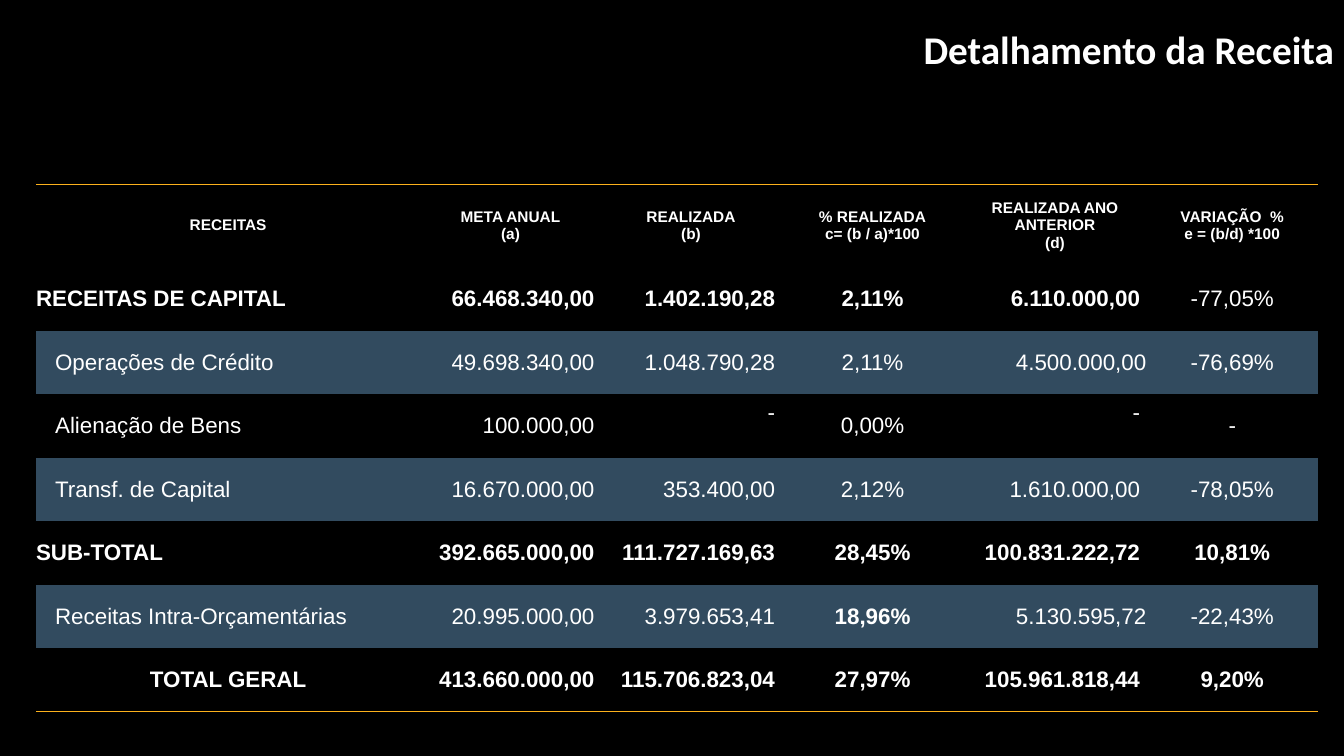
import pptx
import pptx.util
import pptx.dml.color
import pptx.enum.text
import pptx.oxml
import pptx.oxml.ns

Cm, Pt = pptx.util.Cm, pptx.util.Pt
RGBColor = pptx.dml.color.RGBColor
ALIGN = pptx.enum.text.PP_ALIGN
ANCHOR = pptx.enum.text.MSO_ANCHOR

# Content
TITLE = "Detalhamento da Receita"
HEADER = ["RECEITAS", "META ANUAL\n(a)", "REALIZADA\n(b)", "% REALIZADA\nc= (b / a)*100",
          "REALIZADA ANO ANTERIOR\n(d)", "VARIAÇÃO  %\ne = (b/d) *100"]
REVENUES = [
    ["RECEITAS DE CAPITAL", "66.468.340,00", "1.402.190,28", "2,11%", "6.110.000,00", "-77,05%"],
    ["Operações de Crédito", "49.698.340,00", "1.048.790,28", "2,11%", "4.500.000,00", "-76,69%"],
    ["Alienação de Bens", "100.000,00", "-", "0,00%", "-", "-"],
    ["Transf. de Capital", "16.670.000,00", "353.400,00", "2,12%", "1.610.000,00", "-78,05%"],
    ["SUB-TOTAL", "392.665.000,00", "111.727.169,63", "28,45%", "100.831.222,72", "10,81%"],
    ["Receitas Intra-Orçamentárias", "20.995.000,00", "3.979.653,41", "18,96%", "5.130.595,72",
     "-22,43%"],
    ["TOTAL GERAL", "413.660.000,00", "115.706.823,04", "27,97%", "105.961.818,44", "9,20%"],
]
ROWS = [HEADER] + REVENUES
LAST = len(ROWS) - 1

# Format
BLACK = RGBColor(0x00, 0x00, 0x00)
WHITE = RGBColor(0xFF, 0xFF, 0xFF)
BAND = RGBColor(0x32, 0x4B, 0x5F)
GOLD = RGBColor(0xFC, 0xB1, 0x1C)
NO_STYLE = "{2D5ABB26-0587-4C30-8999-92F81FD0307C}"
COL_WIDTHS = [9.68, 4.55, 4.55, 4.6, 4.6, 4.33]
HEADER_HEIGHT, ROW_HEIGHT = 2.09, 1.6
BOLD_ROWS = {0, 1, 5, LAST}
BOLD_EXCEPTIONS = {(1, 5), (6, 3)}
INDENTED_ROWS = {2, 3, 4, 6}
AMOUNT_COLS = {1, 2, 4}
FLUSH_AMOUNTS = {(2, 4), (6, 4)}


def set_format(obj, values):
    for name, value in values.items():
        setattr(obj, name, value)


def style_font(font, name, size, bold):
    set_format(font, {"name": name, "size": Pt(size), "bold": bold})
    font.color.rgb = WHITE


def add_border(cell, side):
    cell._tc.get_or_add_tcPr().insert(0, pptx.oxml.parse_xml(
        f'<a:{side} {pptx.oxml.ns.nsdecls("a")} w="12700"><a:solidFill>'
        f'<a:srgbClr val="{GOLD}"/></a:solidFill></a:{side}>'))


def cell_align(row, col):
    if row == 0 or col in (3, 5) or (row == LAST and col == 0):
        return ALIGN.CENTER
    return ALIGN.LEFT if col == 0 else ALIGN.RIGHT


def fill_cell(cell, row, col, text):
    amount = row > 0 and col in AMOUNT_COLS
    raised = amount and text == "-"
    set_format(cell, {
        "text": text,
        "vertical_anchor": ANCHOR.MIDDLE,
        "margin_left": Cm(0.48 if col == 0 and row in INDENTED_ROWS else 0),
        "margin_right": Cm(0.16 if amount and (row, col) not in FLUSH_AMOUNTS else 0),
        "margin_top": 0,
        "margin_bottom": Cm(0.64 if raised else 0),
    })
    bold = (row in BOLD_ROWS) != ((row, col) in BOLD_EXCEPTIONS)
    for p in cell.text_frame.paragraphs:
        p.alignment = cell_align(row, col)
        for r in p.runs:
            style_font(r.font, "Arial", 16 if row else 11, bold)
    # Every second row is banded
    if row and row % 2 == 0:
        cell.fill.solid()
        cell.fill.fore_color.rgb = BAND
    else:
        cell.fill.background()
    if row in (0, LAST):
        add_border(cell, "lnB" if row else "lnT")


def main():
    prs = pptx.Presentation()
    set_format(prs, {"slide_width": Cm(33.87), "slide_height": Cm(19.05)})
    s = prs.slides.add_slide(prs.slide_layouts[5])
    s.background.fill.solid()
    s.background.fill.fore_color.rgb = BLACK

    # Title
    sp = s.shapes.title
    set_format(sp, {"left": Cm(12.47), "top": Cm(0.5), "width": Cm(21.4), "height": Cm(1.45)})
    tf = sp.text_frame
    set_format(tf, {"text": TITLE, "word_wrap": True, "vertical_anchor": ANCHOR.TOP,
                    "auto_size": pptx.enum.text.MSO_AUTO_SIZE.NONE})
    p = tf.paragraphs[0]
    p.alignment = ALIGN.RIGHT
    style_font(p.runs[0].font, "Calibri", 28, True)

    # Revenue table
    heights = [HEADER_HEIGHT] + [ROW_HEIGHT] * LAST
    frame = s.shapes.add_table(len(ROWS), len(HEADER), Cm(0.91), Cm(4.64),
                               Cm(sum(COL_WIDTHS)), Cm(sum(heights)))
    table = frame.table
    set_format(table, {"first_row": False, "horz_banding": False})
    table._tbl.tblPr.find(pptx.oxml.ns.qn("a:tableStyleId")).text = NO_STYLE
    for column, width in zip(table.columns, COL_WIDTHS):
        column.width = Cm(width)
    for i, (row, height) in enumerate(zip(table.rows, heights)):
        row.height = Cm(height)
        for j, text in enumerate(ROWS[i]):
            fill_cell(table.cell(i, j), i, j, text)

    prs.save("out.pptx")


if __name__ == "__main__":
    main()
